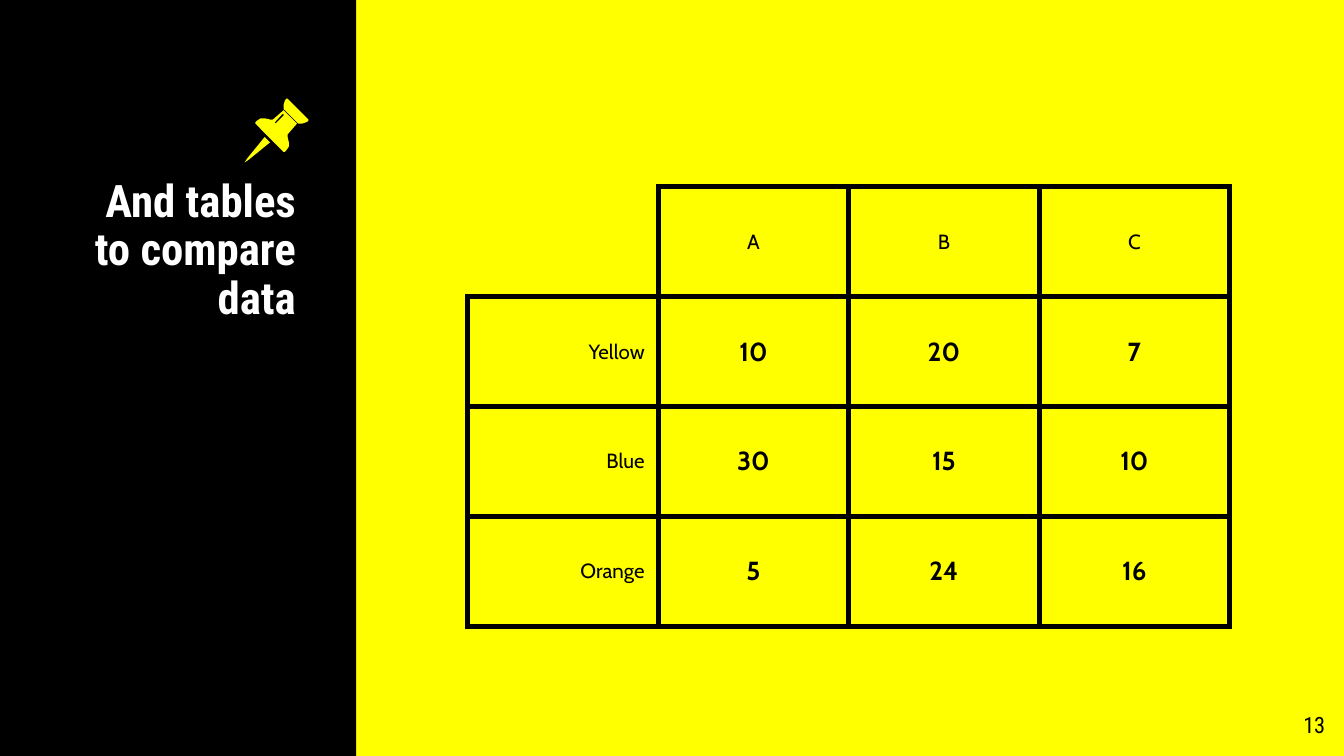
from dataclasses import dataclass

from lxml.etree import SubElement
from pptx import Presentation
from pptx.dml.color import RGBColor
from pptx.enum.shapes import MSO_SHAPE as Preset
from pptx.enum.text import MSO_ANCHOR as Anchor, PP_ALIGN as Align
from pptx.oxml.ns import qn
from pptx.util import Inches, Pt


@dataclass(frozen=True)
class Theme:
    yellow: RGBColor = RGBColor(0xFF, 0xFF, 0x00)
    black: RGBColor = RGBColor(0x00, 0x00, 0x00)
    white: RGBColor = RGBColor(0xFF, 0xFF, 0xFF)
    heading_font: str = "Roboto Condensed"
    body_font: str = "Cabin"
    title_size: int = 24
    label_size: int = 11
    value_size: int = 14
    number_size: int = 12
    border_width: int = 3


THEME = Theme()

HEADERS = ["", "A", "B", "C"]
ROWS = [
    ["Yellow", "10", "20", "7"],
    ["Blue", "30", "15", "10"],
    ["Orange", "5", "24", "16"],
]

# One half of each pin part, in thousandths of an inch; the other half is mirrored
PIN_SIZE = 480
PIN_HALVES = {
    "needle": [(0, 480), (20, 450), (150, 290)],
    "cap": [(290, 80), (290, 50), (300, 20), (310, 5), (320, 5), (330, 15)],
    "body": [(290, 90), (210, 160), (190, 160), (150, 150), (120, 150),
             (90, 170), (80, 180), (80, 190)],
}
PIN_SLIT = [(280, 120), (225, 180), (230, 190), (290, 130), (290, 120)]


def write_text(frame, text, *, size, font=THEME.body_font, color=THEME.black,
               bold=False, align=Align.LEFT, line_spacing=None):
    frame.word_wrap = True
    paragraph = frame.paragraphs[0]
    paragraph.alignment = align
    if line_spacing:
        paragraph.line_spacing = line_spacing
    run = paragraph.add_run()
    run.text = text
    run.font.name = font
    run.font.size = Pt(size)
    run.font.bold = bold
    run.font.color.rgb = color


def add_text(slide, box, text, **text_format):
    frame = slide.shapes.add_textbox(*map(Inches, box)).text_frame
    frame.margin_left = frame.margin_right = Inches(0.1)
    frame.margin_top = frame.margin_bottom = Inches(0.1)
    write_text(frame, text, **text_format)


def fill_plain(shape, color):
    shape.shadow.inherit = False
    shape.fill.solid()
    shape.fill.fore_color.rgb = color
    shape.line.fill.background()


def add_pin(slide, left, top):
    group = slide.shapes.add_group_shape()
    for name, half in PIN_HALVES.items():
        mirrored = [(PIN_SIZE - y, PIN_SIZE - x) for x, y in reversed(half)]
        outline = half + mirrored
        builder = group.shapes.build_freeform(*outline[0], scale=Inches(0.001))
        builder.add_line_segments(outline[1:], close=True)
        if name == "body":
            builder.move_to(*PIN_SLIT[0])
            builder.add_line_segments(PIN_SLIT[1:], close=True)
        fill_plain(builder.convert_to_shape(Inches(left), Inches(top)), THEME.yellow)


def add_side_panel(slide, left, top, width, height):
    panel = slide.shapes.add_shape(
        Preset.RECTANGLE, *map(Inches, (left, top, width, height)))
    fill_plain(panel, THEME.black)
    add_text(slide, (left + 0.44, top + 1.23, 1.86, 1.62),
             "And tables to compare data", size=THEME.title_size,
             font=THEME.heading_font, color=THEME.white, bold=True,
             align=Align.RIGHT, line_spacing=0.9)
    add_pin(slide, left + 1.82, top + 0.73)


def set_borders(cell, visible_sides):
    properties = cell._tc.get_or_add_tcPr()
    for index, side in enumerate("LRTB"):
        line = SubElement(properties, qn(f"a:ln{side}"), w=str(Pt(THEME.border_width)))
        if side in visible_sides:
            fill = SubElement(line, qn("a:solidFill"))
            SubElement(fill, qn("a:srgbClr"), val=str(THEME.black))
        else:
            SubElement(line, qn("a:noFill"))
        properties.insert(index, line)  # borders come before the cell fill


def add_data_table(slide, left, top, width, height):
    content = [HEADERS] + ROWS
    table = slide.shapes.add_table(
        len(content), len(HEADERS), *map(Inches, (left, top, width, height))).table
    table.first_row = table.horz_banding = False
    for row, texts in enumerate(content):
        for column, text in enumerate(texts):
            cell = table.cell(row, column)
            cell.fill.background()
            set_borders(cell, "LRTB" if text else "RB")
            if not text:
                continue
            cell.vertical_anchor = Anchor.MIDDLE
            cell.margin_left = cell.margin_right = Inches(0.1)
            cell.margin_top = cell.margin_bottom = Inches(0.07)
            is_value = row > 0 and column > 0
            write_text(cell.text_frame, text, bold=is_value,
                       size=THEME.value_size if is_value else THEME.label_size,
                       align=Align.CENTER if column else Align.RIGHT)


def main():
    presentation = Presentation()
    presentation.slide_width = Inches(10)
    presentation.slide_height = Inches(10) * 9 // 16
    slide = presentation.slides.add_slide(presentation.slide_layouts[6])
    slide.background.fill.solid()
    slide.background.fill.fore_color.rgb = THEME.yellow

    # Side panel with pin and title
    add_side_panel(slide, 0, 0, 2.65, presentation.slide_height.inches
                   if hasattr(presentation.slide_height, "inches") else 5.63)

    # Comparison table
    add_data_table(slide, 3.48, 1.39, 5.67, 3.27)

    # Slide number
    add_text(slide, (9.36, 5.19, 0.6, 0.43), "13", size=THEME.number_size,
             font=THEME.heading_font, align=Align.RIGHT)

    presentation.save("out.pptx")


if __name__ == "__main__":
    main()
